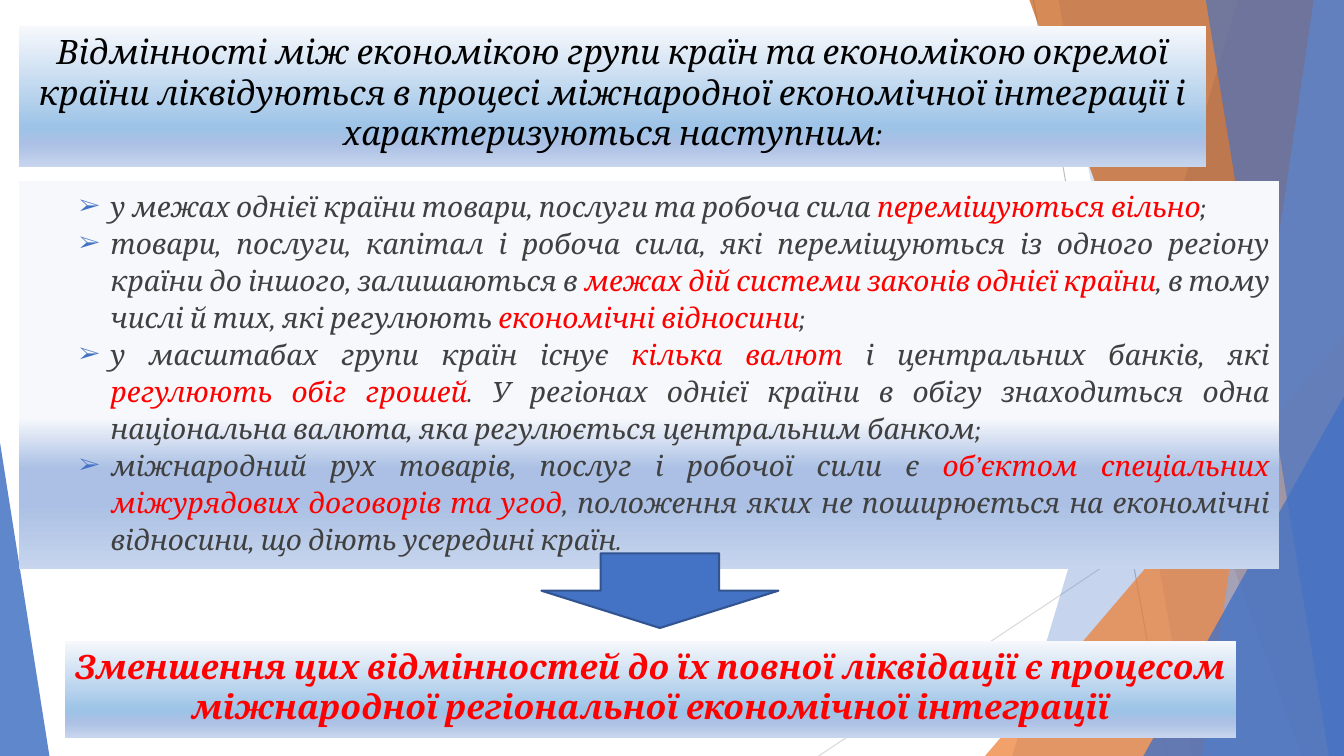
from lxml import etree
from pptx import Presentation
from pptx.dml.color import RGBColor
from pptx.enum.shapes import MSO_SHAPE
from pptx.enum.text import MSO_ANCHOR, PP_ALIGN
from pptx.oxml import parse_xml
from pptx.oxml.ns import nsdecls, qn
from pptx.util import Inches, Pt

RECT, ARROW = MSO_SHAPE.RECTANGLE, MSO_SHAPE.DOWN_ARROW
TRIANGLE = MSO_SHAPE.ISOSCELES_TRIANGLE
TOP = MSO_ANCHOR.TOP
CENTER, JUSTIFY = PP_ALIGN.CENTER, PP_ALIGN.JUSTIFY

BLACK = RGBColor(0x00, 0x00, 0x00)
GRAY = RGBColor(0x40, 0x40, 0x40)
RED = RGBColor(0xFF, 0x00, 0x00)
BLUE = RGBColor(0x44, 0x72, 0xC4)
NAVY = RGBColor(0x32, 0x54, 0x91)
SKY = RGBColor(0x8F, 0xAA, 0xDC)
ORANGE = RGBColor(0xED, 0x7D, 0x31)
RUST = RGBColor(0xC5, 0x5A, 0x11)
SILVER = RGBColor(0xBF, 0xBF, 0xBF)
PALE = RGBColor(0xD9, 0xD9, 0xD9)
ICE = RGBColor(0xF6, 0xF8, 0xFC)
AZURE = RGBColor(0x9D, 0xC3, 0xE6)
MIST = RGBColor(0xAB, 0xC0, 0xE4)
HAZE = RGBColor(0xC7, 0xD5, 0xED)

FONT = "Cambria"
WIDTH, HEIGHT = 13.33, 7.5
BANNER = [(0, ICE), (72, AZURE), (83, MIST), (100, HAZE)]
PANEL = [(61, ICE), (74, MIST), (83, MIST), (100, HAZE)]

HEAD = ("Відмінності між економікою групи країн та економікою окремої країни "
        "ліквідуються в процесі міжнародної економічної інтеграції і "
        "характеризуються наступним:")
CLOSE = ("Зменшення цих відмінностей до їх повної ліквідації є процесом "
         "міжнародної регіональної економічної інтеграції")
# Runs alternate between gray and red, starting with gray.
POINTS = [
    ["у межах однієї країни товари, послуги та робоча сила ",
     "переміщуються вільно", ";"],
    ["товари, послуги, капітал і робоча сила, які переміщуються із одного "
     "регіону країни до іншого, залишаються в ",
     "межах дій системи законів однієї країни",
     ", в тому числі й тих, які регулюють ", "економічні відносини", ";"],
    ["у масштабах групи країн існує ", "кілька валют",
     " і центральних банків, які ", "регулюють обіг грошей",
     ". У регіонах однієї країни в обігу знаходиться одна національна "
     "валюта, яка регулюється центральним банком;"],
    ["міжнародний рух товарів, послуг і робочої сили є ",
     "об’єктом спеціальних міжурядових договорів та угод",
     ", положення яких не поширюється на економічні відносини, що діють "
     "усередині країн."],
]


def paint(shape, color, alpha=100):
    """Fill a shape with a colour, alpha in percent, and no outline."""
    shape.shadow.inherit = False
    shape.fill.solid()
    shape.fill.fore_color.rgb = color
    shape.line.fill.background()
    if alpha < 100:
        tint = shape.fill._xPr.find(qn("a:solidFill"))[0]
        etree.SubElement(tint, qn("a:alpha")).set("val", str(alpha * 1000))


def add_line(slide, start, end, color):
    x1, y1, x2, y2 = (Inches(v) for v in start + end)
    line = slide.shapes.add_connector(1, x1, y1, x2, y2)
    line.line.color.rgb = color
    line.line.width = Pt(0.75)
    etree.SubElement(line._element.spPr, qn("a:effectLst"))


def add_strip(slide, top, bottom, color, alpha):
    """Add a full-height strip from a slanted left edge to the right edge."""
    form = slide.shapes.build_freeform(Inches(top), 0, scale=1.0)
    form.add_line_segments([(Inches(x), Inches(y)) for x, y in
                            ((WIDTH, 0), (WIDTH, HEIGHT), (bottom, HEIGHT))])
    paint(form.convert_to_shape(), color, alpha)


def add_wedge(slide, box, peak, color, alpha):
    """Add a triangle whose top point sits at the given share of its width."""
    wedge = slide.shapes.add_shape(TRIANGLE, *map(Inches, box))
    wedge.adjustments[0] = peak
    paint(wedge, color, alpha)


def add_decor(slide):
    add_line(slide, (10.25, 0), (11.58, HEIGHT), SILVER)
    add_line(slide, (WIDTH, 4.03), (8.12, HEIGHT), PALE)
    add_strip(slide, 12.28, 10.04, BLUE, 30)
    add_strip(slide, 10.5, 11.83, BLUE, 20)
    add_wedge(slide, (9.77, 3.33, 3.56, 4.17), 1, ORANGE, 72)
    add_strip(slide, 10.21, 12.91, RUST, 70)
    add_strip(slide, 13.03, 11.92, SKY, 70)
    add_strip(slide, 11.96, 13.18, BLUE, 65)
    add_wedge(slide, (11.34, 3.93, 1.99, 3.57), 1, BLUE, 80)
    add_wedge(slide, (0, 4.39, 0.49, 3.11), 0, BLUE, 85)


def add_box(slide, box, stops):
    """Add a box with a downward gradient and return its text frame."""
    shape = slide.shapes.add_shape(RECT, *map(Inches, box))
    paint(shape, ICE)
    marks = "".join(f'<a:gs pos="{pos * 1000}"><a:srgbClr val="{color}"/></a:gs>'
                    for pos, color in stops)
    blend = parse_xml(f'<a:gradFill {nsdecls("a")} rotWithShape="1">'
                      f'<a:gsLst>{marks}</a:gsLst>'
                      '<a:lin ang="5400000" scaled="0"/></a:gradFill>')
    props = shape._element.spPr
    props.replace(props.find(qn("a:solidFill")), blend)
    frame = shape.text_frame
    frame.word_wrap = True
    frame.vertical_anchor = TOP
    return frame


def add_run(para, text, size, color, bold=False):
    run = para.add_run()
    run.text = text
    font = run.font
    font.name, font.size = FONT, Pt(size)
    font.bold, font.italic = bold, True
    font.color.rgb = color


def add_banner(slide, box, text, color, bold=False):
    para = add_box(slide, box, BANNER).paragraphs[0]
    para.alignment = CENTER
    add_run(para, text, 24, color, bold)


def set_bullet(para):
    props = para._p.get_or_add_pPr()
    props.set("marL", str(Inches(0.81)))
    props.set("indent", str(Inches(-0.31)))
    tint = etree.SubElement(props, qn("a:buClr"))
    etree.SubElement(tint, qn("a:srgbClr")).set("val", str(BLUE))
    etree.SubElement(props, qn("a:buSzPct")).set("val", "80000")
    etree.SubElement(props, qn("a:buFont")).set("typeface", FONT)
    etree.SubElement(props, qn("a:buChar")).set("char", "➢")


def add_points(slide, box):
    frame = add_box(slide, box, PANEL)
    for i, parts in enumerate(POINTS):
        para = frame.add_paragraph() if i else frame.paragraphs[0]
        para.alignment = JUSTIFY
        para.line_spacing = 1.1
        set_bullet(para)
        for j, text in enumerate(parts):
            add_run(para, text, 20, RED if j % 2 else GRAY)


def add_arrow(slide, box):
    arrow = slide.shapes.add_shape(ARROW, *map(Inches, box))
    paint(arrow, BLUE)
    arrow.line.color.rgb = NAVY
    arrow.line.width = Pt(1.5)


def main():
    deck = Presentation()
    deck.slide_width, deck.slide_height = Inches(WIDTH), Inches(HEIGHT)
    slide = deck.slides.add_slide(deck.slide_layouts[6])
    add_decor(slide)
    add_banner(slide, (0.19, 0.26, 11.77, 1.4), HEAD, BLACK)
    add_points(slide, (0.19, 1.8, 12.5, 3.85))
    add_banner(slide, (0.64, 6.36, 11.62, 0.96), CLOSE, RED, bold=True)
    add_arrow(slide, (5.37, 5.49, 2.35, 0.74))
    deck.save("out.pptx")


if __name__ == "__main__":
    main()
